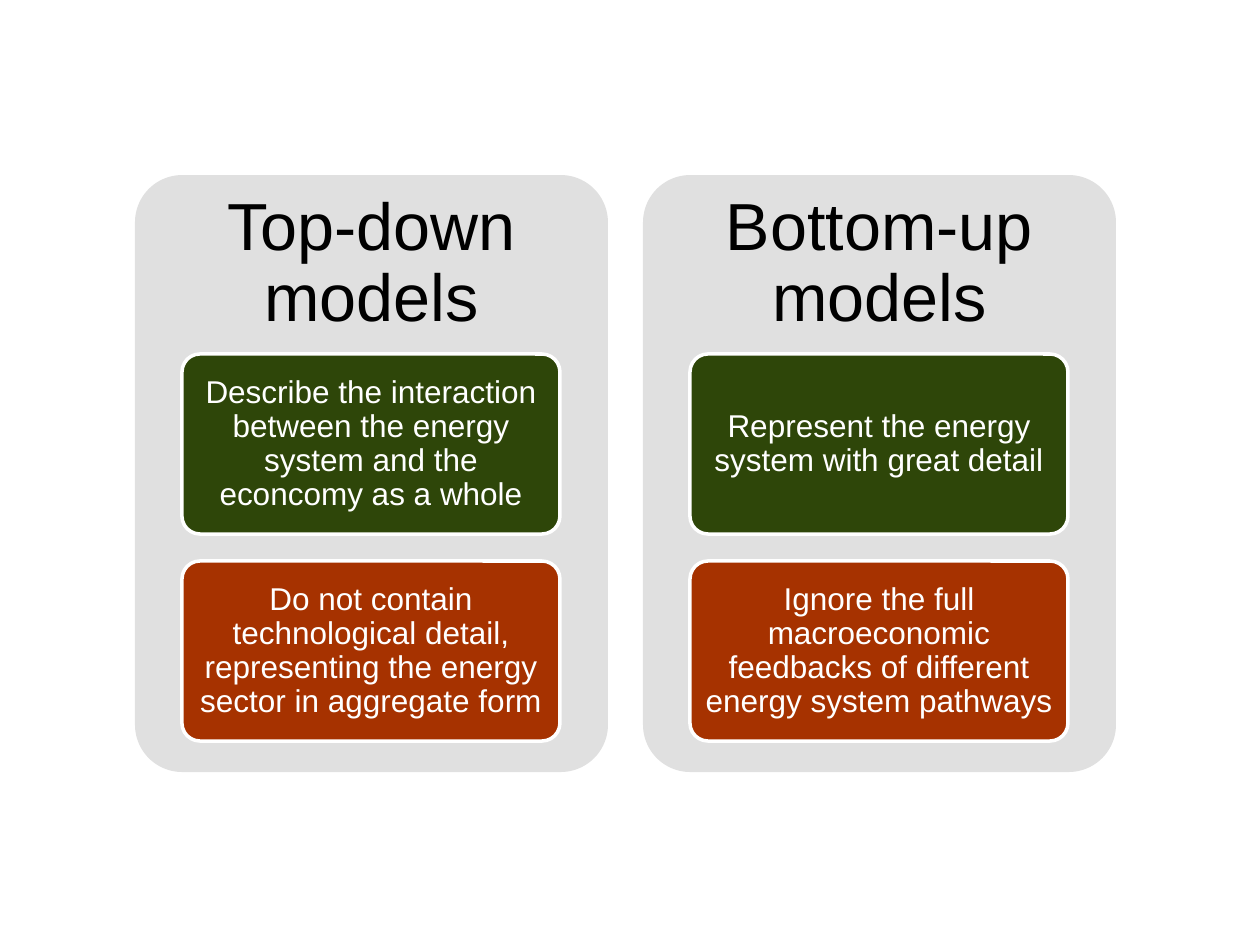
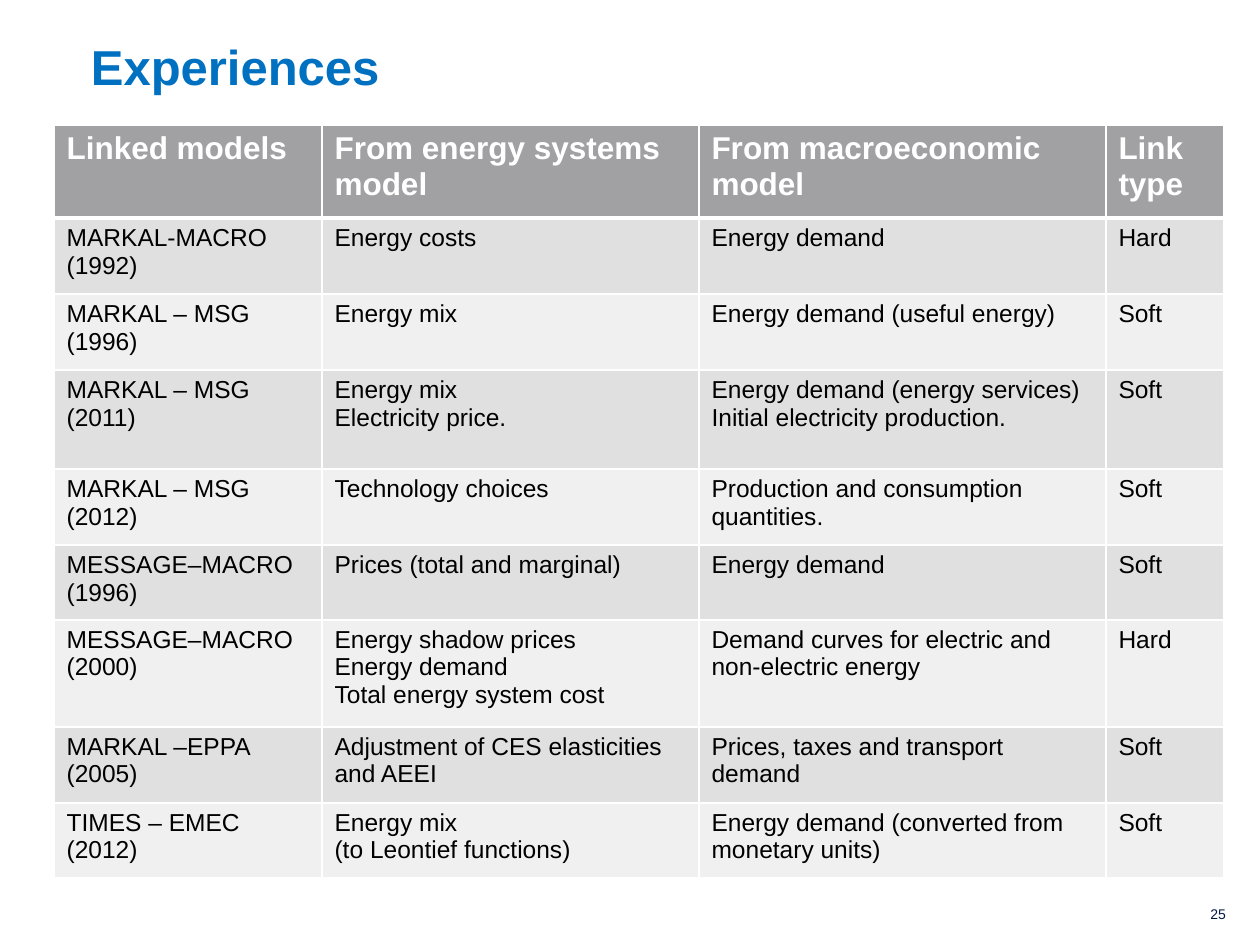
from lxml.etree import SubElement
from pptx import Presentation
from pptx.dml.color import RGBColor
from pptx.enum.shapes import MSO_SHAPE
from pptx.enum.text import MSO_ANCHOR, MSO_AUTO_SIZE, PP_ALIGN
from pptx.oxml.ns import qn
from pptx.util import Pt

FONT = "Arial"
COLORS = {
    "white": "FFFFFF", "black": "000000", "card": "E0E0E0", "strength": "2E4609",
    "weakness": "A63200", "title": "0070C0", "header": "A1A1A4",
    "band_dark": "E0E0E0", "band_light": "F0F0F0", "page": "021946",
}

CARDS = [
    ("Top-down models",
     "Describe the interaction between the energy system and the econcomy as a whole",
     "Do not contain technological detail, representing the energy sector in aggregate form"),
    ("Bottom-up models",
     "Represent the energy system with great detail",
     "Ignore the full macroeconomic feedbacks of different energy system pathways"),
]

TITLE = "Experiences"
PAGE = "25"
HEADER = ["Linked models", "From energy systems model", "From macroeconomic model", "Link type"]
ROWS = [
    ("MARKAL-MACRO (1992)", "Energy costs", "Energy demand", "Hard"),
    ("MARKAL – MSG (1996)", "Energy mix", "Energy demand (useful energy)", "Soft"),
    ("MARKAL – MSG (2011)", "Energy mix\nElectricity price.",
     "Energy demand (energy services) Initial electricity production.", "Soft"),
    ("MARKAL – MSG (2012)", "Technology choices",
     "Production and consumption quantities.", "Soft"),
    ("MESSAGE–MACRO (1996)", "Prices (total and marginal)", "Energy demand", "Soft"),
    ("MESSAGE–MACRO (2000)", "Energy shadow prices\nEnergy demand\nTotal energy system cost",
     "Demand curves for electric and non-electric energy", "Hard"),
    ("MARKAL –EPPA (2005)", "Adjustment of CES elasticities and AEEI",
     "Prices, taxes and transport demand", "Soft"),
    ("TIMES – EMEC (2012)", "Energy mix\n(to Leontief functions)",
     "Energy demand (converted from monetary units)", "Soft"),
]
COL_WIDTHS = [268, 377, 407, 118]
ROW_HEIGHTS = [93, 76, 76, 99, 76, 75, 107, 76, 75]


def px(n):
    return round(n * 914400 / 126)


def rgb(name):
    return RGBColor.from_string(COLORS[name])


def write(tf, text, size, color, bold=False, align=PP_ALIGN.LEFT, anchor=None,
          inset=None, spacing=None):
    """Fill a text frame, one paragraph per line; inset is (horizontal, vertical) px."""
    tf.word_wrap = True
    if anchor is not None:
        tf.vertical_anchor = anchor
    if inset is not None:
        tf.margin_left = tf.margin_right = px(inset[0])
        tf.margin_top = tf.margin_bottom = px(inset[1])
    tf.text = text
    for p in tf.paragraphs:
        p.alignment = align
        if spacing:
            p.line_spacing = spacing
        p.font.name = FONT
        p.font.size = Pt(size)
        p.font.bold = bold
        p.font.color.rgb = rgb(color)


def add_textbox(slide, box, text, **fmt):
    sp = slide.shapes.add_textbox(*map(px, box))
    write(sp.text_frame, text, **fmt)


def add_round_rect(slide, box, fill, line=None):
    sp = slide.shapes.add_shape(MSO_SHAPE.ROUNDED_RECTANGLE, *map(px, box))
    sp.adjustments[0] = 0.1
    sp.shadow.inherit = False
    sp.fill.solid()
    sp.fill.fore_color.rgb = rgb(fill)
    if line:
        sp.line.color.rgb = rgb(line)
        sp.line.width = Pt(2)
    else:
        sp.line.fill.background()
    return sp


def set_borders(cell, top=1, bottom=1):
    tcPr = cell._tc.get_or_add_tcPr()
    for side, width in (("L", 1), ("R", 1), ("T", top), ("B", bottom)):
        ln = SubElement(tcPr, qn(f"a:ln{side}"), w=str(Pt(width)))
        fill = SubElement(ln, qn("a:solidFill"))
        SubElement(fill, qn("a:srgbClr"), val=COLORS["white"])


def build_comparison(prs):
    slide = prs.slides.add_slide(prs.slide_layouts[6])
    centred = dict(align=PP_ALIGN.CENTER, anchor=MSO_ANCHOR.MIDDLE, spacing=0.9)
    top, width, height, head_height = 175, 473, 597, 179
    box_width, box_height, box_step = 378, 180, 207
    for i, (heading, *points) in enumerate(CARDS):
        left = 135 + i * 508
        add_round_rect(slide, (left, top, width, height), "card")
        add_textbox(slide, (left, top, width, head_height), heading,
                    size=38, color="black", inset=(20, 20), **centred)
        box_left = left + (width - box_width) // 2
        for j, (point, fill) in enumerate(zip(points, ("strength", "weakness"))):
            box = (box_left, top + head_height + j * box_step, box_width, box_height)
            sp = add_round_rect(slide, box, fill, line="white")
            write(sp.text_frame, point, size=18, color="white", inset=(6, 5), **centred)


def build_experiences(prs):
    slide = prs.slides.add_slide(prs.slide_layouts[5])
    title = slide.shapes.title
    title.left, title.top, title.width, title.height = map(px, (91, -63, 1072, 158))
    title.text_frame.auto_size = MSO_AUTO_SIZE.NONE
    write(title.text_frame, TITLE, size=28, color="title", bold=True,
          anchor=MSO_ANCHOR.BOTTOM, inset=(0, 0))

    frame = slide.shapes.add_table(len(ROW_HEIGHTS), len(COL_WIDTHS), px(54), px(125),
                                   px(sum(COL_WIDTHS)), px(sum(ROW_HEIGHTS)))
    table = frame.table
    table.horz_banding = False
    for col, width in zip(table.columns, COL_WIDTHS):
        col.width = px(width)
    for row, height in zip(table.rows, ROW_HEIGHTS):
        row.height = px(height)
    for r, texts in enumerate([HEADER, *ROWS]):
        is_header = r == 0
        fill = "header" if is_header else "band_dark" if r % 2 else "band_light"
        for c, text in enumerate(texts):
            cell = table.cell(r, c)
            set_borders(cell, top=3 if r == 1 else 1, bottom=3 if is_header else 1)
            cell.fill.solid()
            cell.fill.fore_color.rgb = rgb(fill)
            write(cell.text_frame, text, size=18 if is_header else 14,
                  color="white" if is_header else "black", bold=is_header)

    add_textbox(slide, (1166, 906, 60, 23), PAGE, size=8, color="page",
                align=PP_ALIGN.RIGHT, inset=(0, 0))


def main():
    prs = Presentation()
    prs.slide_width, prs.slide_height = px(1260), px(945)
    build_comparison(prs)
    build_experiences(prs)
    prs.save("out.pptx")


if __name__ == "__main__":
    main()
